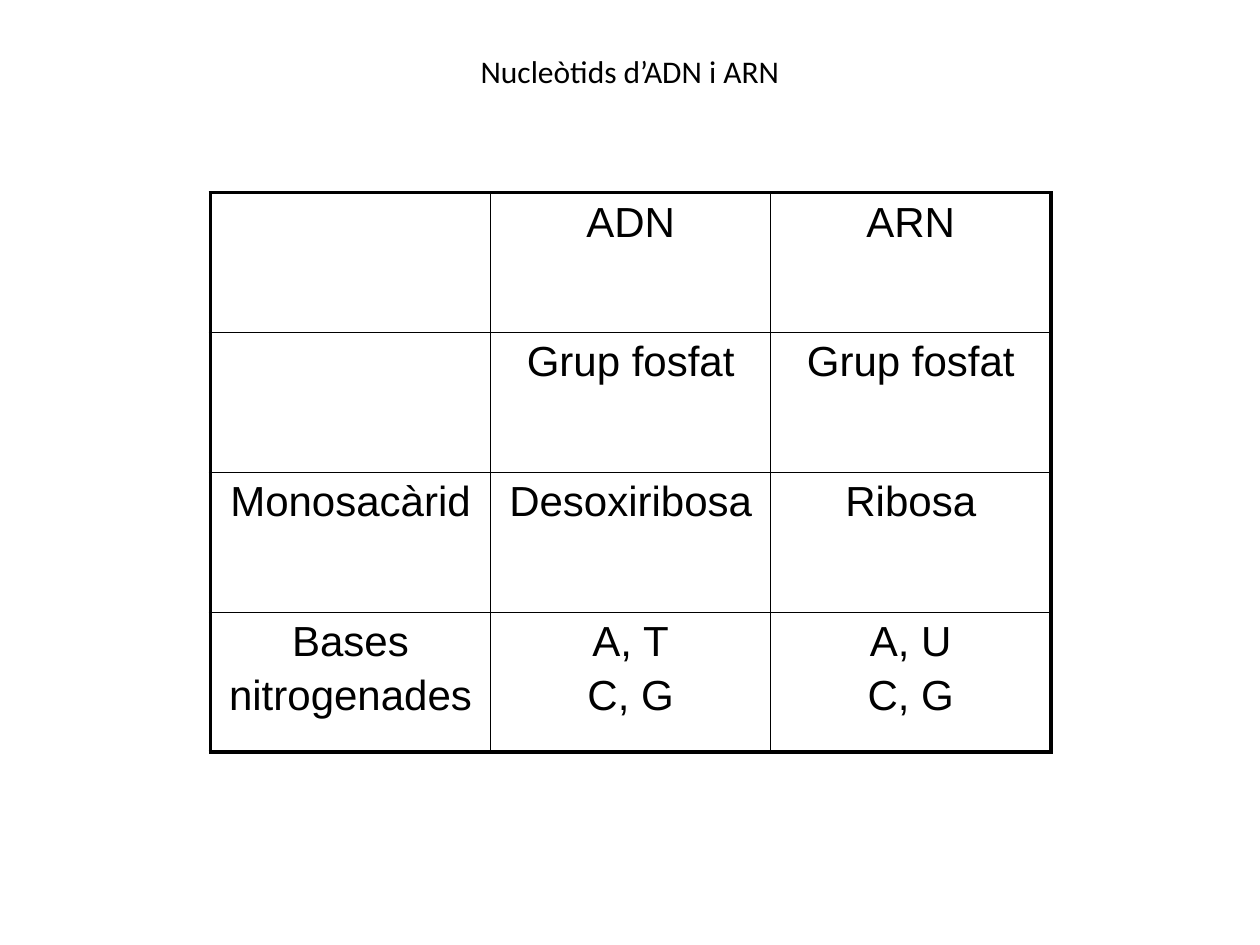
from lxml import etree
from pptx import Presentation
from pptx import util as u
from pptx.dml.color import RGBColor
from pptx.enum import text
from pptx.oxml.ns import qn


def style(par, size, face, tint="000000"):
    par.alignment = text.PP_ALIGN.CENTER
    for key, val in {"size": u.Pt(size), "name": face, "bold": False}.items():
        setattr(par.font, key, val)
    par.font.color.rgb = RGBColor.from_string(tint)


def edge(cell, sides, tint="000000"):
    props = cell._tc.get_or_add_tcPr()
    for spot, (side, width) in enumerate(sides.items()):
        line = etree.Element(qn("a:ln" + side), w=str(int(u.Pt(width))))
        fill = etree.SubElement(line, qn("a:solidFill"))
        etree.SubElement(fill, qn("a:srgbClr"), val=tint)
        props.insert(spot, line)


deck = Presentation()
deck.slide_width, deck.slide_height = u.Inches(10), u.Inches(7.5)
slide = deck.slides.add_slide(deck.slide_layouts[5])

title = slide.shapes.title
place = {"left": 0.75, "top": 0.36, "width": 8.5, "height": 0.57}
for key, val in place.items():
    setattr(title, key, u.Inches(val))
frame = title.text_frame
frame.text = "Nucleòtids d’ADN i ARN"
form = {
    "word_wrap": True,
    "auto_size": text.MSO_AUTO_SIZE.NONE,
    "vertical_anchor": text.MSO_ANCHOR.TOP,
}
for key, val in form.items():
    setattr(frame, key, val)
style(frame.paragraphs[0], 18, "Calibri")

rows = [
    ["", "ADN", "ARN"],
    ["", "Grup fosfat", "Grup fosfat"],
    ["Monosacàrid", "Desoxiribosa", "Ribosa"],
    ["Bases\nnitrogenades", "A, T\nC, G", "A, U\nC, G"],
]
high, wide = len(rows), len(rows[0])
thin, thick = 1, 2.25
box = [u.Inches(n) for n in (1.67, 1.53, 6.67, 4.44)]
table = slide.shapes.add_table(high, wide, *box).table
table.first_row = table.horz_banding = False

for r, row in enumerate(rows):
    for c, words in enumerate(row):
        cell = table.cell(r, c)
        cell.fill.background()
        edge(cell, {
            "L": thick if c == 0 else thin,
            "R": thick if c == wide - 1 else thin,
            "T": thick if r == 0 else thin,
            "B": thick if r == high - 1 else thin,
        })
        cell.text_frame.text = words
        for n, par in enumerate(cell.text_frame.paragraphs):
            style(par, 24, "Arial")
            if n:
                par.space_before = u.Pt(4)

deck.save("out.pptx")
